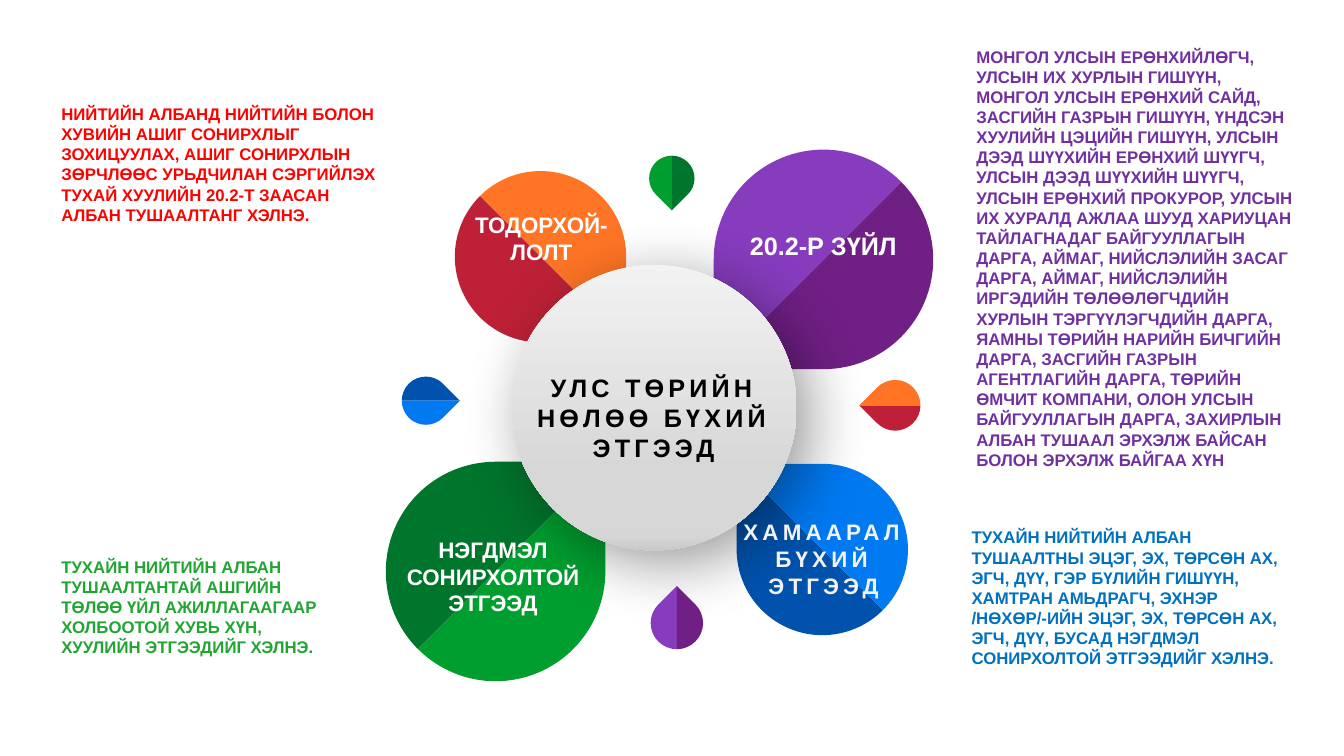
"""Build the slide on persons with political influence."""
from math import cos, radians, sin, sqrt, tan

from lxml.etree import SubElement
from pptx import Presentation
from pptx.dml.color import RGBColor
from pptx.enum.shapes import MSO_SHAPE as SHAPE
from pptx.enum.text import MSO_AUTO_SIZE as AUTO, PP_ALIGN as ALIGN
from pptx.oxml.ns import qn
from pptx.util import Pt

COLORS = {
    "purple": "873CBE", "plum": "701F85", "green": "009E2F", "forest": "00752C",
    "orange": "FF7525", "crimson": "BE2137", "azure": "0079F1", "navy": "0052AC",
    "red_text": "FF0000", "green_text": "21A531", "purple_text": "7030A0",
    "blue_text": "0070C0", "black": "000000", "white": "FFFFFF", "pale": "F2F2F2",
    "grey_top": "FAFAFA", "grey_mid": "D7D7D7", "grey_low": "AFABAB",
}

# centre x, centre y, radius, direction of the tip, clockwise half, other half
DROPS = [
    (588.2, 185.3, 78.4, 135, "purple", "plum"),
    (354, 408.2, 78.4, 315, "green", "forest"),
    (386.1, 183.4, 61.2, 45, "crimson", "orange"),
    (587.4, 392.5, 61.2, 225, "azure", "navy"),
]
SMALL_DROPS = [
    (483.5, 445, 18.7, 270, "plum", "purple"),
    (304.2, 286.2, 17.2, 0, "azure", "navy"),
    (639.4, 289.5, 18.1, 180, "orange", "crimson"),
    (479.9, 127.4, 16.2, 90, "green", "forest"),
]

NOTES = [
    ((36.72, 70.45, 246.24, 94.32), "red_text",
     "НИЙТИЙН АЛБАНД НИЙТИЙН БОЛОН ХУВИЙН АШИГ СОНИРХЛЫГ ЗОХИЦУУЛАХ, АШИГ "
     "СОНИРХЛЫН ЗӨРЧЛӨӨС УРЬДЧИЛАН СЭРГИЙЛЭХ ТУХАЙ ХУУЛИЙН 20.2-Т ЗААСАН "
     "АЛБАН ТУШААЛТАНГ ХЭЛНЭ."),
    ((36.72, 393.84, 212.4, 79.92), "green_text",
     "ТУХАЙН НИЙТИЙН АЛБАН ТУШААЛТАНТАЙ АШГИЙН ТӨЛӨӨ ҮЙЛ АЖИЛЛАГААГААР "
     "ХОЛБООТОЙ ХУВЬ ХҮН, ХУУЛИЙН ЭТГЭЭДИЙГ ХЭЛНЭ."),
    ((690.3, 29.52, 241.2, 312.48), "purple_text",
     "МОНГОЛ УЛСЫН ЕРӨНХИЙЛӨГЧ, УЛСЫН ИХ ХУРЛЫН ГИШҮҮН, МОНГОЛ УЛСЫН ЕРӨНХИЙ "
     "САЙД, ЗАСГИЙН ГАЗРЫН ГИШҮҮН, ҮНДСЭН ХУУЛИЙН ЦЭЦИЙН ГИШҮҮН, УЛСЫН ДЭЭД "
     "ШҮҮХИЙН ЕРӨНХИЙ ШҮҮГЧ, УЛСЫН ДЭЭД ШҮҮХИЙН ШҮҮГЧ, УЛСЫН ЕРӨНХИЙ ПРОКУРОР, "
     "УЛСЫН ИХ ХУРАЛД АЖЛАА ШУУД ХАРИУЦАН ТАЙЛАГНАДАГ БАЙГУУЛЛАГЫН ДАРГА, "
     "АЙМАГ, НИЙСЛЭЛИЙН ЗАСАГ ДАРГА, АЙМАГ, НИЙСЛЭЛИЙН ИРГЭДИЙН ТӨЛӨӨЛӨГЧДИЙН "
     "ХУРЛЫН ТЭРГҮҮЛЭГЧДИЙН ДАРГА, ЯАМНЫ ТӨРИЙН НАРИЙН БИЧГИЙН ДАРГА, ЗАСГИЙН "
     "ГАЗРЫН АГЕНТЛАГИЙН ДАРГА, ТӨРИЙН ӨМЧИТ КОМПАНИ, ОЛОН УЛСЫН БАЙГУУЛЛАГЫН "
     "ДАРГА, ЗАХИРЛЫН АЛБАН ТУШААЛ ЭРХЭЛЖ БАЙСАН БОЛОН ЭРХЭЛЖ БАЙГАА ХҮН"),
    ((686.88, 372.96, 236.16, 108.72), "blue_text",
     "ТУХАЙН НИЙТИЙН АЛБАН ТУШААЛТНЫ ЭЦЭГ, ЭХ, ТӨРСӨН АХ, ЭГЧ, ДҮҮ, ГЭР БҮЛИЙН "
     "ГИШҮҮН, ХАМТРАН АМЬДРАГЧ, ЭХНЭР /НӨХӨР/-ИЙН ЭЦЭГ, ЭХ, ТӨРСӨН АХ, ЭГЧ, "
     "ДҮҮ, БУСАД НЭГДМЭЛ СОНИРХОЛТОЙ ЭТГЭЭДИЙГ ХЭЛНЭ."),
]

# box, colour, text, size, letter spacing, wrap
LABELS = [
    ((360, 262.08, 213.84, 87.12), "black", "УЛС ТӨРИЙН НӨЛӨӨ БҮХИЙ ЭТГЭЭД", 18, 3, True),
    ((527.9, 160.9, 125.28, 28.8), "white", "20.2-Р ЗҮЙЛ ", 18, 0, False),
    ((523.6, 366.8, 129.6, 65.52), "pale", "ХАМААРАЛ БҮХИЙ ЭТГЭЭД", 16, 3, True),
    ((277.3, 379.2, 149.76, 65.52), "white", "НЭГДМЭЛ СОНИРХОЛТОЙ ЭТГЭЭД", 16, 0, True),
    ((326.2, 147.2, 120.96, 46.08), "white", "ТОДОРХОЙ-ЛОЛТ", 16, 0, True),
]


def rgb(name):
    """Return the named colour."""
    return RGBColor.from_string(COLORS[name])


def add_half(slide, cx, cy, radius, tip, turn, color):
    """Add half of a drop, on the side of the tip that turn (1 or -1) gives."""
    def point(angle, out=1, along=0):
        a = radians(tip + turn * angle)
        x = out * cos(a) - turn * along * sin(a)
        y = out * sin(a) + turn * along * cos(a)
        return Pt(cx + radius * x), Pt(cy + radius * y)

    handle = 4 / 3 * tan(radians(45 / 4))
    points = [point(45)]
    for angle in (45, 90, 135):
        points += [point(angle, along=handle), point(angle + 45, along=-handle),
                   point(angle + 45)]
    builder = slide.shapes.build_freeform(*point(0, sqrt(2)))
    builder.add_line_segments(points, close=True)
    sp = builder.convert_to_shape()
    curve_arc(sp)
    sp.shadow.inherit = False
    sp.fill.solid()
    sp.fill.fore_color.rgb = rgb(color)
    sp.line.fill.background()
    return sp


def curve_arc(sp):
    """Turn every three segments after the first into one Bezier curve."""
    lines = list(sp.element.iter(qn("a:lnTo")))[1:]
    for i in range(0, len(lines), 3):
        curve = lines[i].makeelement(qn("a:cubicBezTo"))
        lines[i].addprevious(curve)
        for line in lines[i:i + 3]:
            curve.append(line[0])
            line.getparent().remove(line)


def add_drop(slide, cx, cy, radius, tip, clockwise, other):
    """Add a two-tone drop whose halves meet on the axis through its tip."""
    halves = [add_half(slide, cx, cy, radius, tip, turn, color)
              for turn, color in ((-1, other), (1, clockwise))]
    slide.shapes.add_group_shape(halves)


def add_color(parent, name):
    """Append a colour element and return it."""
    return SubElement(parent, qn("a:srgbClr"), val=COLORS[name])


def add_hub(slide, cx, cy, radius):
    """Add the grey central disc with its gradient and soft shadow."""
    box = (cx - radius, cy - radius, 2 * radius, 2 * radius)
    sp = slide.shapes.add_shape(SHAPE.OVAL, *map(Pt, box))
    sp.rotation = 45
    sp.line.fill.background()
    sp.fill.gradient()
    sp.fill.gradient_angle = 315
    stops = sp.element.spPr.find(qn("a:gradFill")).find(qn("a:gsLst"))
    for old in list(stops):
        stops.remove(old)
    for pos, name in ((0, "grey_top"), (67, "grey_mid"), (81, "grey_mid"), (94, "grey_low")):
        add_color(SubElement(stops, qn("a:gs"), pos=str(pos * 1000)), name)
    sp.shadow.inherit = False
    effects = sp.element.spPr.find(qn("a:effectLst"))
    shadow = SubElement(effects, qn("a:outerShdw"), blurRad=str(Pt(45)),
                        dist=str(Pt(13)), dir="2700000", algn="tl")
    SubElement(add_color(shadow, "black"), qn("a:alpha"), val="40000")


def add_text(slide, box, color, text, size=12, spacing=0, wrap=True, align=ALIGN.LEFT):
    """Add a bold text box."""
    sp = slide.shapes.add_textbox(*map(Pt, box))
    tf = sp.text_frame
    tf.word_wrap = wrap
    tf.auto_size = AUTO.SHAPE_TO_FIT_TEXT
    p = tf.paragraphs[0]
    p.alignment = align
    r = p.add_run()
    r.text = text
    for key, value in {"name": "Arial", "size": Pt(size), "bold": True}.items():
        setattr(r.font, key, value)
    r.font.color.rgb = rgb(color)
    if spacing:
        for props in sp.element.iter(qn("a:rPr")):
            props.set("spc", str(spacing * 100))


def main():
    """Build and save the slide."""
    prs = Presentation()
    prs.slide_width, prs.slide_height = Pt(960), Pt(540)
    slide = prs.slides.add_slide(prs.slide_layouts[6])
    for drop in DROPS:
        add_drop(slide, *drop)
    add_hub(slide, 467.1, 291.24, 101.9)
    for drop in SMALL_DROPS:
        add_drop(slide, *drop)
    for note in NOTES:
        add_text(slide, *note)
    for label in LABELS:
        add_text(slide, *label, align=ALIGN.CENTER)
    prs.save("out.pptx")


if __name__ == "__main__":
    main()
